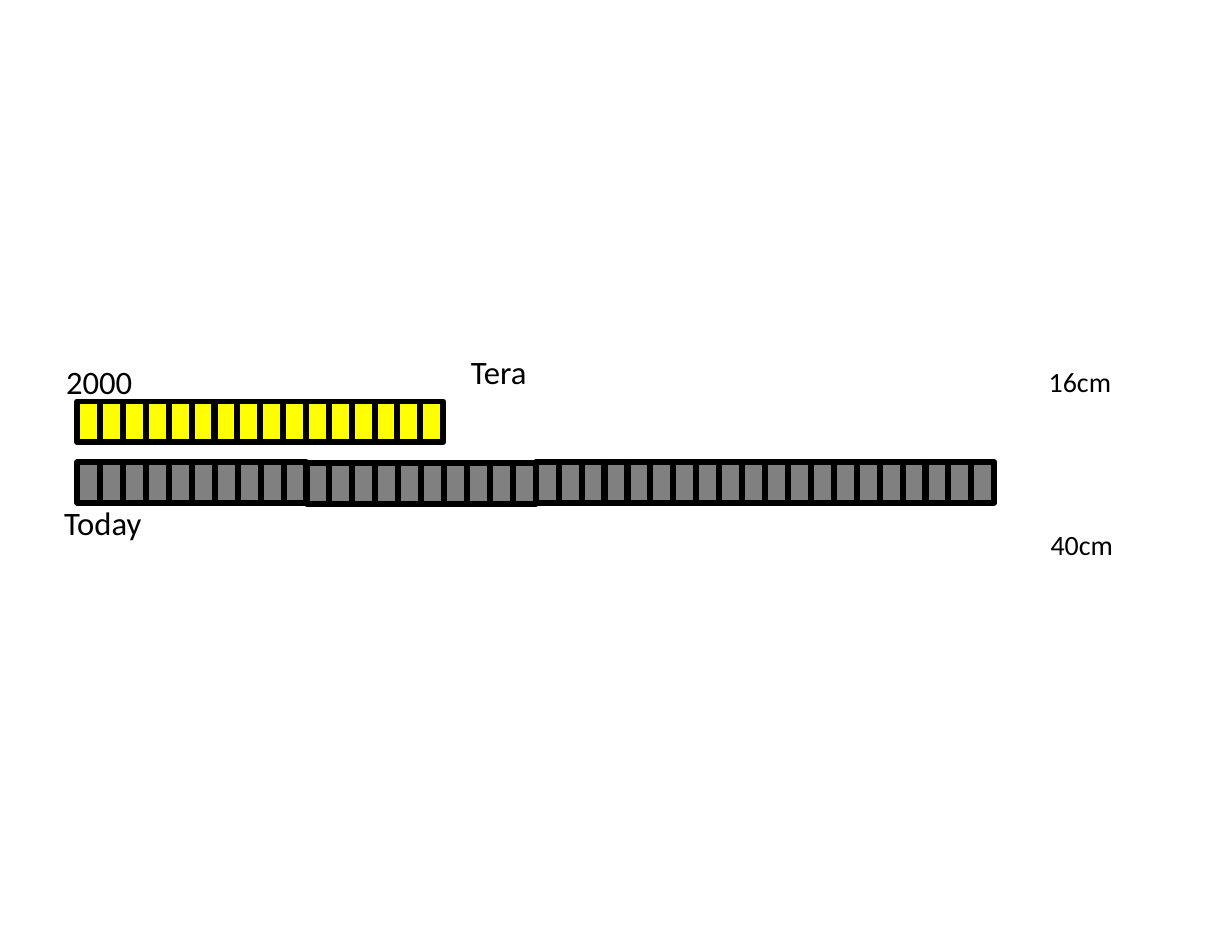
from dataclasses import dataclass

from pptx import Presentation
from pptx.dml.color import RGBColor
from pptx.enum.shapes import MSO_SHAPE
from pptx.enum.text import MSO_AUTO_SIZE, PP_ALIGN
from pptx.slide import Slide
from pptx.util import Cm, Pt

RECT = MSO_SHAPE.RECTANGLE
GROW = MSO_AUTO_SIZE.SHAPE_TO_FIT_TEXT
LEFT, CENTER = PP_ALIGN.LEFT, PP_ALIGN.CENTER


@dataclass(frozen=True)
class Theme:
    font: str = "Calibri"
    ink: RGBColor = RGBColor(0x00, 0x00, 0x00)
    yellow: RGBColor = RGBColor(0xFF, 0xFF, 0x00)
    grey: RGBColor = RGBColor(0x80, 0x80, 0x80)
    name_size: float = 24.8
    length_size: float = 21.2
    outline: float = 4.5


@dataclass(frozen=True)
class Strip:
    """A row of equal cells; lengths in cm, one top per block of cells."""
    fill: RGBColor
    first_left: float
    last_left: float
    block_tops: tuple[float, ...]
    block_size: int


@dataclass(frozen=True)
class Label:
    text: str
    left: float
    top: float
    width: float
    height: float
    size: float
    align: PP_ALIGN = LEFT


THEME = Theme()
CELL_LENGTH, CELL_WIDTH = 1.09, 0.61

STRIPS = [
    Strip(THEME.grey, 1.83, 25.78, (12.62, 12.65, 12.62, 12.62), 10),
    Strip(THEME.yellow, 1.83, 11.02, (11.0,), 16),
]

LABELS = [
    Label("2000", 1.52, 9.58, 2.9, 1.32, THEME.name_size),
    Label("Today", 1.47, 13.36, 3.33, 1.32, THEME.name_size),
    Label("Tera", 10.64, 9.3, 5.44, 1.32, THEME.name_size, CENTER),
    Label("40cm", 27.89, 14.0, 3.35, 1.17, THEME.length_size),
    Label("16cm", 27.84, 9.65, 3.4, 1.17, THEME.length_size),
]


def add_strip(s: Slide, strip: Strip) -> None:
    count = strip.block_size * len(strip.block_tops)
    pitch = (strip.last_left - strip.first_left) / (count - 1)
    for block, top in enumerate(strip.block_tops):
        group = s.shapes.add_group_shape()
        for i in range(strip.block_size):
            left = strip.first_left + (block * strip.block_size + i) * pitch
            sp = group.shapes.add_shape(
                RECT, Cm(left), Cm(top), Cm(CELL_LENGTH), Cm(CELL_WIDTH))
            sp.rotation = 90
            sp.shadow.inherit = False
            sp.fill.solid()
            sp.fill.fore_color.rgb = strip.fill
            sp.line.color.rgb = THEME.ink
            sp.line.width = Pt(THEME.outline)


def add_text(s: Slide, text: str, *, left: float, top: float, width: float,
             height: float, size: float, align: PP_ALIGN = LEFT) -> None:
    tf = s.shapes.add_textbox(
        Cm(left), Cm(top), Cm(width), Cm(height)).text_frame
    tf.word_wrap = True
    tf.auto_size = GROW
    p = tf.paragraphs[0]
    p.alignment = align
    r = p.add_run()
    r.text = text
    r.font.name = THEME.font
    r.font.size = Pt(size)
    r.font.color.rgb = THEME.ink


def main() -> None:
    prs = Presentation()
    prs.slide_width, prs.slide_height = Cm(33), Cm(25)
    s = prs.slides.add_slide(prs.slide_layouts[6])

    # Cell strips
    for strip in STRIPS:
        add_strip(s, strip)

    # Strip names and lengths
    for label in LABELS:
        add_text(s, label.text, left=label.left, top=label.top,
                 width=label.width, height=label.height,
                 size=label.size, align=label.align)

    prs.save("out.pptx")


if __name__ == "__main__":
    main()
